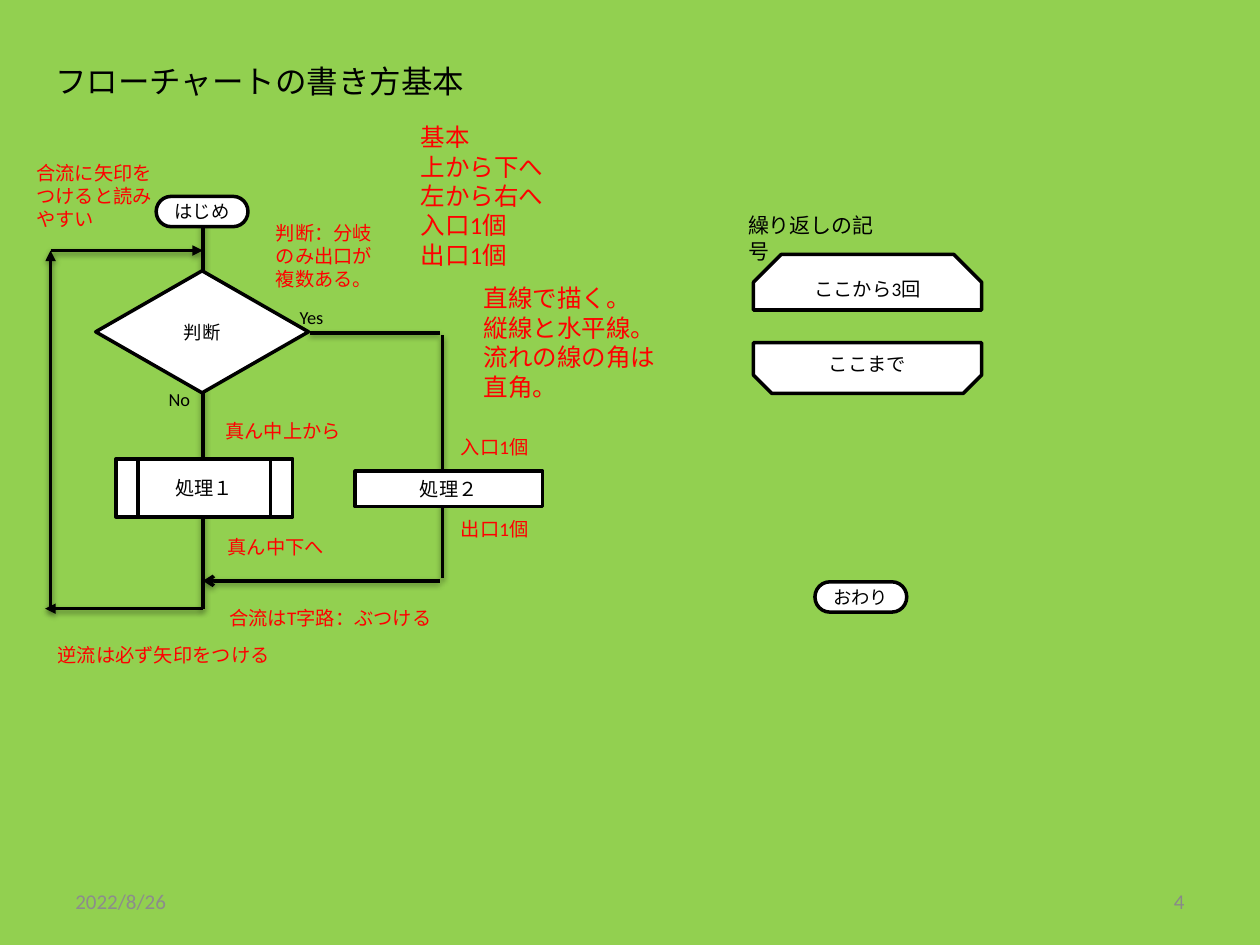
from dataclasses import dataclass

from lxml import etree
from pptx import Presentation
from pptx.dml.color import RGBColor
from pptx.enum.shapes import MSO_CONNECTOR, MSO_SHAPE
from pptx.enum.text import MSO_ANCHOR, MSO_AUTO_SIZE, PP_ALIGN
from pptx.oxml import parse_xml
from pptx.oxml.ns import qn
from pptx.util import Cm, Pt

STRAIGHT = MSO_CONNECTOR.STRAIGHT
TERMINATOR = MSO_SHAPE.FLOWCHART_TERMINATOR
DECISION = MSO_SHAPE.FLOWCHART_DECISION
PROCESS = MSO_SHAPE.FLOWCHART_PROCESS
SUBROUTINE = MSO_SHAPE.FLOWCHART_PREDEFINED_PROCESS
LOOP_LIMIT = MSO_SHAPE.SNIP_2_SAME_RECTANGLE
LEFT, CENTER, RIGHT = PP_ALIGN.LEFT, PP_ALIGN.CENTER, PP_ALIGN.RIGHT
TOP, MIDDLE = MSO_ANCHOR.TOP, MSO_ANCHOR.MIDDLE
GROW = MSO_AUTO_SIZE.SHAPE_TO_FIT_TEXT

LINE_SHADOW = (
    '<a:effectLst xmlns:a="http://schemas.openxmlformats.org/drawingml/2006/main">'
    '<a:outerShdw blurRad="40000" dist="20000" dir="5400000" rotWithShape="0">'
    '<a:srgbClr val="000000"><a:alpha val="38000"/></a:srgbClr>'
    '</a:outerShdw></a:effectLst>'
)


@dataclass(frozen=True)
class Theme:
    font: str = "Calibri"
    background: str = "92D050"
    ink: str = "000000"
    paper: str = "FFFFFF"
    note: str = "FF0000"
    date: str = "8C8C8C"
    number: str = "898989"
    title_size: float = 18
    rule_size: float = 14
    label_size: float = 12
    note_size: float = 11
    small_size: float = 10.5
    line_width: float = 2


class FlowSlide:
    """Draws flowchart elements; all lengths are in centimetres."""

    def __init__(self, slide, theme):
        self.slide = slide
        self.theme = theme
        fill = slide.background.fill
        fill.solid()
        fill.fore_color.rgb = RGBColor.from_string(theme.background)

    def fill_text(self, frame, lines, size, color, align, anchor):
        frame.word_wrap = True
        frame.vertical_anchor = anchor
        for index, line in enumerate(lines):
            para = frame.paragraphs[0] if index == 0 else frame.add_paragraph()
            para.text = line
            para.alignment = align
            para.font.name = self.theme.font
            para.font.size = Pt(size)
            para.font.color.rgb = RGBColor.from_string(color)

    def outline(self, line):
        line.color.rgb = RGBColor.from_string(self.theme.ink)
        line.width = Pt(self.theme.line_width)

    def text(self, place, lines, size, color, align=LEFT, anchor=TOP):
        box = self.slide.shapes.add_textbox(*map(Cm, place))
        self.fill_text(box.text_frame, lines, size, color, align, anchor)
        if anchor == TOP:
            box.text_frame.auto_size = GROW

    def note(self, place, *lines):
        self.text(place, lines, self.theme.note_size, self.theme.note)

    def symbol(self, kind, place, label, size, adjustments=()):
        shape = self.slide.shapes.add_shape(kind, *map(Cm, place))
        for index, value in enumerate(adjustments):
            shape.adjustments[index] = value
        shape.shadow.inherit = False
        shape.fill.solid()
        shape.fill.fore_color.rgb = RGBColor.from_string(self.theme.paper)
        self.outline(shape.line)
        self.fill_text(shape.text_frame, [label], size, self.theme.ink, CENTER, MIDDLE)

    def flow(self, start, end, head=None):
        connector = self.slide.shapes.add_connector(
            STRAIGHT, *map(Cm, (*start, *end)))
        self.outline(connector.line)
        properties = connector._element.spPr
        if head:
            etree.SubElement(properties.find(qn("a:ln")), qn("a:tailEnd"), type=head)
        properties.append(parse_xml(LINE_SHADOW))


def main():
    deck = Presentation()
    deck.slide_width, deck.slide_height = Cm(25.4), Cm(19.05)
    theme = Theme()
    page = FlowSlide(deck.slides.add_slide(deck.slide_layouts[6]), theme)
    small, medium = theme.small_size, theme.note_size

    # Flow lines: main column, Yes branch on the right, loop back on the left
    main_x, branch_x, loop_x = 4.09, 8.92, 1.02
    corner_x = 8.86
    entry_y, yes_y, merge_y, return_y = 5.05, 6.71, 11.71, 12.27
    page.flow((branch_x, 6.76), (branch_x, 11.66))
    page.flow((main_x, 4.27), (main_x, return_y))
    page.flow((6.25, yes_y), (corner_x, yes_y))
    page.flow((corner_x, merge_y), (main_x, merge_y), "arrow")
    page.flow((main_x, return_y), (0.91, return_y), "triangle")
    page.flow((loop_x, entry_y), (main_x, entry_y), "triangle")
    page.flow((loop_x, return_y), (loop_x, entry_y), "triangle")

    # Flowchart symbols
    for left, top, label in ((3.15, 3.96, "はじめ"), (16.43, 11.73, "おわり")):
        page.symbol(TERMINATOR, (left, top, 1.85, 0.61), label, small)
    page.symbol(DECISION, (1.93, 5.46, 4.29, 2.46), "判断", small)
    page.symbol(SUBROUTINE, (2.34, 9.25, 3.56, 1.17), "処理１", medium)
    page.symbol(PROCESS, (7.16, 9.5, 3.78, 0.71), "処理２", medium)

    # Loop symbols
    page.symbol(LOOP_LIMIT, (15.19, 5.13, 4.6, 1.12), "ここから3回", medium, (0.5, 0))
    page.symbol(LOOP_LIMIT, (15.19, 6.91, 4.6, 1.02), "ここまで", medium, (0, 0.36))

    # Title and black labels
    for place, label, size in (
        ((0.86, 1.12, 8.79, 1.02), "フローチャートの書き方基本", theme.title_size),
        ((14.83, 4.17, 3.4, 0.76), "繰り返しの記号", theme.label_size),
        ((5.79, 6.05, 1.37, 0.71), "Yes", small),
        ((3.15, 7.7, 1.37, 0.71), "No", small),
    ):
        page.text(place, [label], size, theme.ink)

    # Basic drawing rules
    page.text((8.23, 2.34, 3.2, 3.25),
              ["基本", "上から下へ", "左から右へ", "入口1個", "出口1個"],
              theme.rule_size, theme.note)
    page.text((9.5, 5.59, 3.99, 2.64),
              ["直線で描く。", "縦線と水平線。", "流れの線の角は直角。"],
              theme.rule_size, theme.note)

    # Red notes beside the chart
    page.note((4.37, 12.09, 5.13, 0.74), "合流はT字路：ぶつける")
    page.note((0.91, 12.85, 5.13, 0.74), "逆流は必ず矢印をつける")
    page.note((4.29, 8.33, 3.2, 0.74), "真ん中上から")
    page.note((4.34, 10.67, 3.2, 0.74), "真ん中下へ")
    page.note((0.48, 3.12, 3, 1.68), "合流に矢印をつけると読みやすい")
    page.note((9.04, 8.66, 3.2, 0.74), "入口1個")
    page.note((9.04, 10.31, 3.2, 0.74), "出口1個")
    page.note((5.31, 4.34, 2.82, 1.68), "判断：分岐", "のみ出口が複数ある。")

    # Footer
    for left, label, color, align in (
        (1.27, "2022/8/26", theme.date, LEFT),
        (18.21, "4", theme.number, RIGHT),
    ):
        page.text((left, 17.65, 5.92, 1.02), [label], theme.label_size,
                  color, align, MIDDLE)

    deck.save("out.pptx")


if __name__ == "__main__":
    main()
